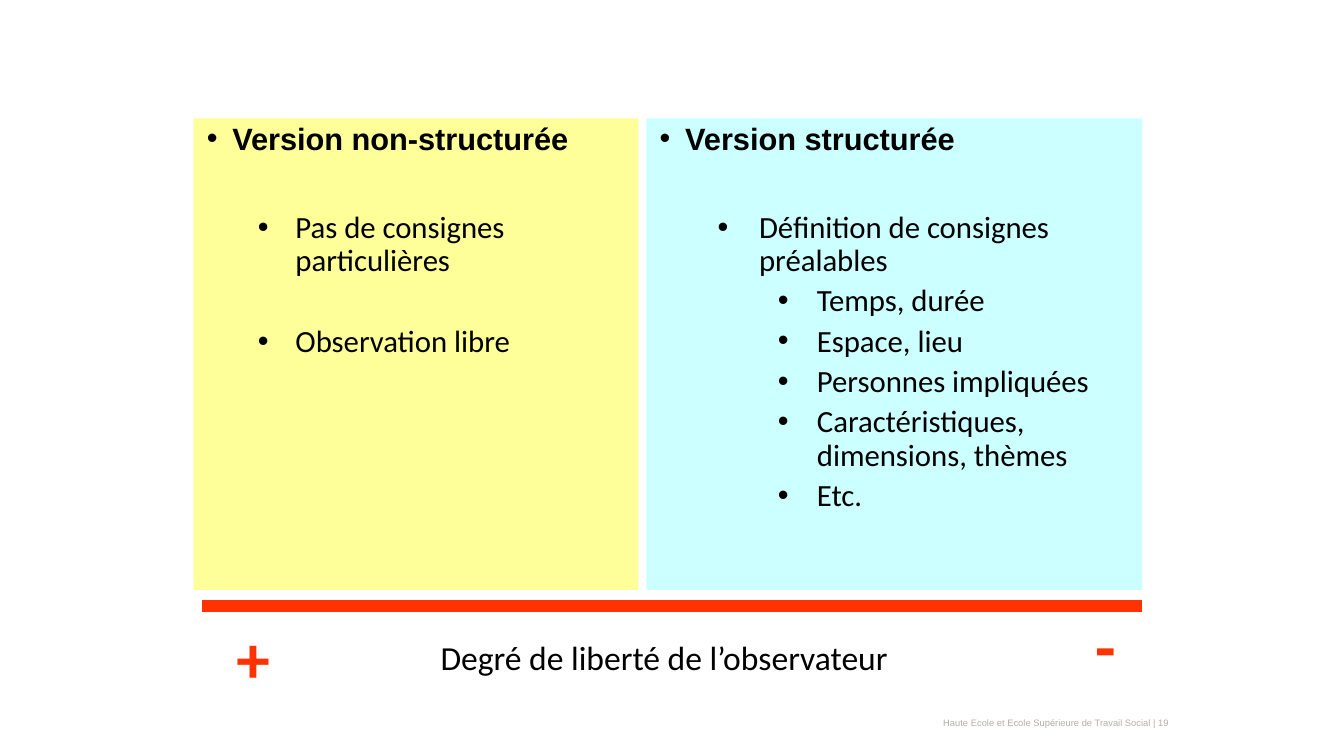
from lxml import etree
from pptx import Presentation
from pptx.dml.color import RGBColor
from pptx.enum.shapes import MSO_CONNECTOR, MSO_SHAPE
from pptx.enum.text import MSO_ANCHOR, PP_ALIGN
from pptx.oxml.ns import qn
from pptx.util import Inches, Pt

COLOURS = {
    "yellow": "FFFF99",
    "cyan": "CCFFFF",
    "red": "FF3300",
    "black": "000000",
    "grey": "B5AEA7",
}
HEADING = {"name": "Arial", "size": Pt(16.5), "bold": True}
ITEM = {"name": "Calibri", "size": Pt(16.5), "bold": False}
SIGN = {"name": "Calibri", "size": Pt(36), "bold": True}
CAPTION = {"name": "Calibri", "size": Pt(18)}
FOOTER = {"name": "Arial", "size": Pt(5)}

HEADING_INDENT = 0.19, 0.19
AFTER_HEADING, WIDE, NARROW = 29.4, 25.7, 3.8


def colour(name):
    return RGBColor.from_string(COLOURS[name])


class SlideBuilder:
    def __init__(self, page):
        self.page = page

    def style(self, para, text, font, ink="black"):
        span = para.add_run()
        span.text = text
        for key, value in font.items():
            setattr(span.font, key, value)
        span.font.color.rgb = colour(ink)

    def bullet(self, para, level, margin, hanging):
        """Set the outline level and a hanging bullet; lengths in inches."""
        para.level = level
        properties = para._p.get_or_add_pPr()
        properties.set("marL", str(Inches(margin)))
        properties.set("indent", str(-Inches(hanging)))
        etree.SubElement(properties, qn("a:buFont")).set("typeface", "Arial")
        etree.SubElement(properties, qn("a:buChar")).set("char", "•")

    def panel(self, left, width, fill, heading, items):
        """Draw a column; items are (text, level, indent, space before)."""
        box = self.page.shapes.add_shape(
            MSO_SHAPE.RECTANGLE, Inches(left), Inches(0.88), Inches(width), Inches(3.51))
        box.shadow.inherit = False
        box.fill.solid()
        box.fill.fore_color.rgb = colour(fill)
        box.line.fill.background()
        frame = box.text_frame
        frame.word_wrap = True
        frame.margin_top = Inches(0.04)
        frame.vertical_anchor = MSO_ANCHOR.TOP
        rows = [(heading, 0, HEADING_INDENT, 0)] + items
        for number, (text, level, indent, gap) in enumerate(rows):
            para = frame.add_paragraph() if number else frame.paragraphs[0]
            self.bullet(para, level, *indent)
            para.alignment = PP_ALIGN.LEFT
            para.line_spacing = 0.9
            para.space_before = Pt(gap)
            self.style(para, text, ITEM if number else HEADING)

    def label(self, text, left, top, width, height, font, ink="black", wrap=True):
        box = self.page.shapes.add_textbox(
            Inches(left), Inches(top), Inches(width), Inches(height))
        box.text_frame.word_wrap = wrap
        self.style(box.text_frame.paragraphs[0], text, font, ink)
        return box.text_frame

    def footer(self, text):
        frame = self.label(text, 6.33, 5.32, 2.47, 0.1, FOOTER, "grey")
        frame.margin_top = frame.margin_bottom = 0
        frame.vertical_anchor = MSO_ANCHOR.MIDDLE
        para = frame.paragraphs[0]
        para.alignment = PP_ALIGN.RIGHT
        para.line_spacing = Pt(7)

    def rule(self, left, right, top, weight, ink):
        line = self.page.shapes.add_connector(
            MSO_CONNECTOR.STRAIGHT, Inches(left), Inches(top), Inches(right), Inches(top))
        line.line.color.rgb = colour(ink)
        line.line.width = Pt(weight)
        etree.SubElement(line._element.spPr, qn("a:effectLst"))


def main():
    deck = Presentation()
    deck.slide_width = Inches(10)
    deck.slide_height = deck.slide_width * 9 // 16
    slide = SlideBuilder(deck.slides.add_slide(deck.slide_layouts[6]))

    slide.footer("Haute Ecole et Ecole Supérieure de Travail Social | 19")

    free_indent = 0.66, 0.28
    slide.panel(1.44, 3.31, "yellow", "Version non-structurée", [
        ("Pas de consignes particulières", 1, free_indent, AFTER_HEADING),
        ("Observation libre", 1, free_indent, WIDE),
    ])
    instructions = ["Temps, durée", "Espace, lieu", "Personnes impliquées",
                    "Caractéristiques, dimensions, thèmes", "Etc."]
    slide.panel(4.81, 3.69, "cyan", "Version structurée", [
        ("Définition de consignes préalables", 1, (0.74, 0.31), AFTER_HEADING),
        *[(text, 2, (1.17, 0.29), NARROW) for text in instructions],
    ])

    slide.rule(1.5, 8.5, 4.51, 6, "red")
    slide.label("+", 1.66, 4.54, 0.44, 0.71, SIGN, "red")
    slide.label("-", 8.05, 4.45, 0.31, 0.71, SIGN, "red")
    slide.label("Degré de liberté de l’observateur", 3.18, 4.69, 3.57, 0.4, CAPTION, wrap=False)

    deck.save("out.pptx")


if __name__ == "__main__":
    main()
